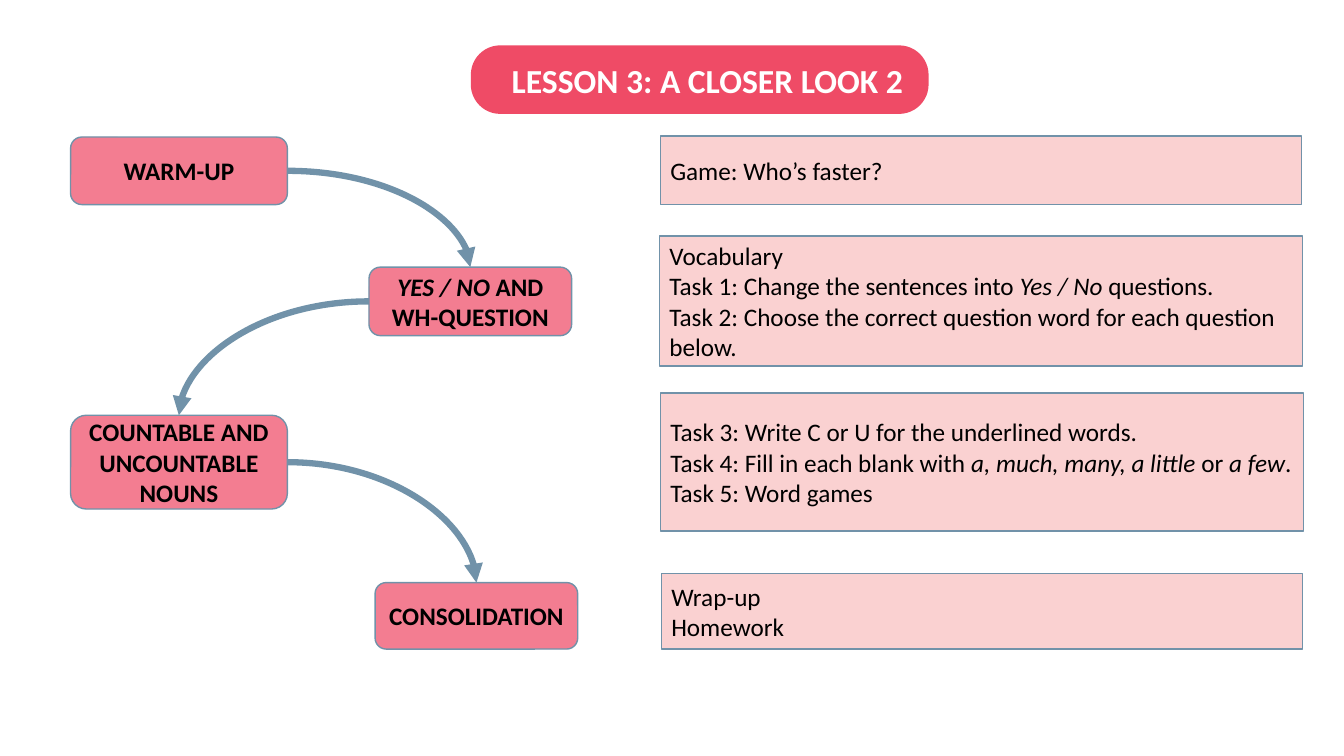
from dataclasses import dataclass
from lxml.etree import SubElement
from pptx import Presentation
from pptx.dml.color import RGBColor as Rgb
from pptx.enum.shapes import MSO_CONNECTOR as Link, MSO_SHAPE as Kind
from pptx.enum.text import MSO_ANCHOR as Anchor, PP_ALIGN as Align
from pptx.oxml.ns import qn
from pptx.util import Inches, Pt


@dataclass(frozen=True)
class Theme:
    font: str = "Calibri"
    title: str = "EF4B66"
    step: str = "F37D91"
    panel: str = "F7A5A5"
    edge: str = "7192A9"
    ink: str = "000000"
    paper: str = "FFFFFF"
    head: int = 24
    body: int = 18
    thin: float = 1
    thick: float = 4.5


THEME = Theme()
WIDE, HIGH = Inches(13.33), Inches(7.5)
COLS, ROWS = 133.3, 75
TOP, LEFT, RIGHT = 0, 1, 3


def place(col, row, cols, rows):
    across, down = WIDE / COLS, HIGH / ROWS
    return [int(n) for n in (col * across, row * down, cols * across, rows * down)]


def write(shape, text, size=THEME.body, color=THEME.ink, bold=False,
          align=Align.LEFT, inset=0.1):
    frame = shape.text_frame
    frame.word_wrap = True
    frame.vertical_anchor = Anchor.MIDDLE
    frame.margin_left = Inches(inset)
    for i, line in enumerate(text.split("\n")):
        para = frame.paragraphs[0] if i == 0 else frame.add_paragraph()
        para.alignment = align
        for j, part in enumerate(line.split("*")):
            if part:
                run = para.add_run()
                run.text = part
                font = run.font
                font.name, font.size = THEME.font, Pt(size)
                font.bold, font.italic = bold, j % 2 == 1
                font.color.rgb = Rgb.from_string(color)


def box(slide, kind, area, fill, edge=True):
    shape = slide.shapes.add_shape(kind, *place(*area))
    shape.shadow.inherit = False
    shape.fill.solid()
    shape.fill.fore_color.rgb = Rgb.from_string(fill)
    if edge:
        shape.line.color.rgb = Rgb.from_string(THEME.edge)
        shape.line.width = Pt(THEME.thin)
    else:
        shape.line.fill.background()
    return shape


def title(slide, text, area):
    shape = box(slide, Kind.ROUNDED_RECTANGLE, area, THEME.title, edge=False)
    shape.adjustments[0] = 0.43
    write(shape, text, size=THEME.head, color=THEME.paper, bold=True, inset=0.32)


def panel(slide, text, area):
    shape = box(slide, Kind.RECTANGLE, area, THEME.panel)
    tint = shape.fill._xPr.find(qn("a:solidFill"))[0]
    SubElement(tint, qn("a:alpha"), val="50000")
    write(shape, text)


def step(slide, text, area):
    shape = box(slide, Kind.ROUNDED_RECTANGLE, area, THEME.step)
    write(shape, text, bold=True, align=Align.CENTER)
    return shape


def arrow(slide, start, end, side):
    link = slide.shapes.add_connector(Link.CURVE, 0, 0, 0, 0)
    link.begin_connect(start, side)
    link.end_connect(end, TOP)
    link.line.color.rgb = Rgb.from_string(THEME.edge)
    link.line.width = Pt(THEME.thick)
    props = link._element.spPr
    props.find(qn("a:prstGeom")).set("prst", "curvedConnector2")
    SubElement(link.line._get_or_add_ln(), qn("a:tailEnd"), type="triangle")
    SubElement(props, qn("a:effectLst"))


def main():
    deck = Presentation()
    deck.slide_width, deck.slide_height = WIDE, HIGH
    slide = deck.slides.add_slide(deck.slide_layouts[6])

    title(slide, "LESSON 3: A CLOSER LOOK 2", (46.7, 4.5, 45.4, 6.8))

    panels = [
        ("Game: Who’s faster?", (65.5, 13.5, 63.6, 6.8)),
        ("Vocabulary\n"
         "Task 1: Change the sentences into *Yes / No *questions.\n"
         "Task 2: Choose the correct question word for each question below.",
         (65.4, 23.4, 63.8, 12.9)),
        ("Task 3: Write C or U for the underlined words.\n"
         "Task 4: Fill in each blank with *a, much, many, a little *or *a few*.\n"
         "Task 5: Word games", (65.5, 39, 63.8, 13.7)),
        ("Wrap-up\nHomework", (65.6, 56.9, 63.6, 7.5)),
    ]
    for text, area in panels:
        panel(slide, text, area)

    plan = [
        ("WARM-UP", (7, 13.6, 21.5, 6.7)),
        ("*YES / NO *AND WH-QUESTION", (36.6, 26.5, 20.1, 6.8)),
        ("COUNTABLE AND UNCOUNTABLE NOUNS", (7, 41.2, 21.5, 9.3)),
        ("CONSOLIDATION", (37.2, 57.8, 20.1, 6.6)),
    ]
    steps = [step(slide, text, area) for text, area in plan]
    for start, end, side in zip(steps, steps[1:], (RIGHT, LEFT, RIGHT)):
        arrow(slide, start, end, side)

    deck.save("out.pptx")


if __name__ == "__main__":
    main()
